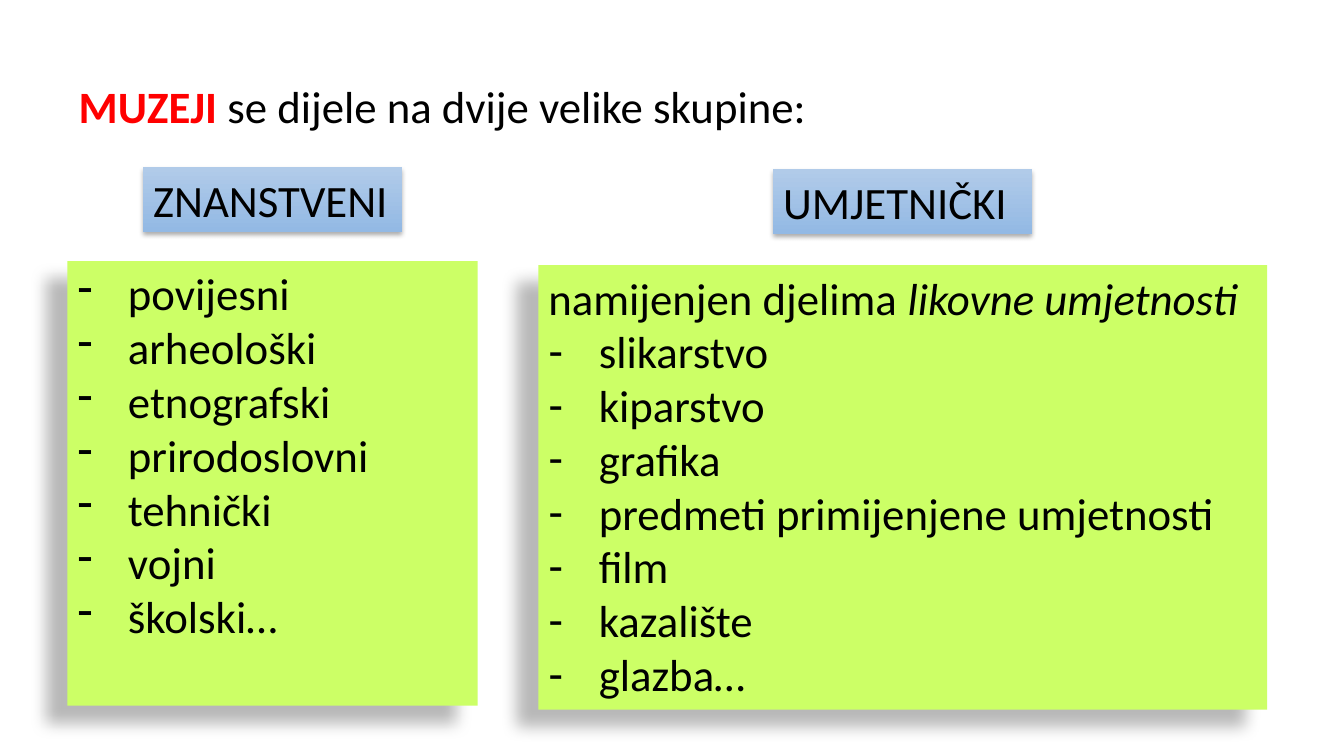
from lxml.etree import SubElement
from pptx import Presentation
from pptx.dml.color import RGBColor
from pptx.enum.text import MSO_ANCHOR, MSO_AUTO_SIZE, PP_ALIGN
from pptx.oxml.ns import qn
from pptx.util import Pt


def rgb(code):
    return RGBColor.from_string(code)


def shade(shape, alpha, blur, dist, angle):
    """Give the shape a soft black shadow."""
    shape.shadow.inherit = False
    effects = shape._element.spPr.find(qn("a:effectLst"))
    outer = SubElement(effects, qn("a:outerShdw"), blurRad=str(Pt(blur)),
                       dist=str(Pt(dist)), dir=str(angle * 60000), rotWithShape="0")
    color = SubElement(outer, qn("a:srgbClr"), val="000000")
    SubElement(color, qn("a:alpha"), val=str(alpha * 1000))


deck = Presentation()
deck.slide_width, deck.slide_height = Pt(960), Pt(540)
slide = deck.slides.add_slide(deck.slide_layouts.get_by_name("Comparison"))
title, head1, list1, head2, list2 = slide.placeholders

# Wording: a dash marks a list item
texts = [
    (title, (49, 52.5, 569, 46), ["MUZEJI| se dijele na dvije velike skupine:"]),
    (head1, (102.2, 119.5, 185, 46), ["ZNANSTVENI"]),
    (head2, (552.2, 121, 185, 46), ["UMJETNIČKI"]),
    (list1, (48.2, 186.5, 293, 317.5),
     ["-povijesni", "-arheološki", "-etnografski", "-prirodoslovni",
      "-tehnički", "-vojni", "-školski…"]),
    (list2, (384.5, 189.4, 520.6, 317.5),
     ["namijenjen djelima |likovne umjetnosti", "-slikarstvo", "-kiparstvo",
      "-grafika", "-predmeti primijenjene umjetnosti", "-film", "-kazalište",
      "-glazba…"]),
]

for shape, box, lines in texts:
    shape.left, shape.top, shape.width, shape.height = map(Pt, box)
    frame = shape.text_frame
    frame.auto_size = MSO_AUTO_SIZE.NONE
    frame.vertical_anchor = MSO_ANCHOR.TOP
    for i, line in enumerate(lines):
        para = frame.add_paragraph() if i else frame.paragraphs[0]
        para.alignment = PP_ALIGN.LEFT
        para.space_before = Pt(0)

        # Dash bullet with a hanging indent, or none
        dash = line.startswith("-")
        props = para._p.get_or_add_pPr()
        props.set("marL", str(Pt(36 if dash else 0)))
        props.set("indent", str(Pt(-36 if dash else 0)))
        if dash:
            SubElement(props, qn("a:buFontTx"))
            SubElement(props, qn("a:buChar"), char="-")
        else:
            SubElement(props, qn("a:buNone"))

        for part in line.removeprefix("-").split("|"):
            run = para.add_run()
            run.text = part
            font = run.font
            font.name, font.size, font.bold = "Calibri", Pt(32), False
            font.color.rgb = rgb("000000")

# Accents
key = title.text_frame.paragraphs[0].runs[0].font
key.bold = True
key.color.rgb = rgb("FF0000")
list2.text_frame.paragraphs[0].runs[1].font.italic = True

# Blue headings
for head in (head1, head2):
    head.fill.gradient()
    head.fill.gradient_angle = 270
    for stop, code in zip(head.fill.gradient_stops, ("B1CBE9", "93B9E4")):
        stop.color.rgb = rgb(code)
    shade(head, 32, 3.5, 2.2, 90)

# Green lists
for panel in (list1, list2):
    panel.fill.solid()
    panel.fill.fore_color.rgb = rgb("CCFF66")
    shade(panel, 28, 11.8, 19.7, 141)

deck.save("out.pptx")
